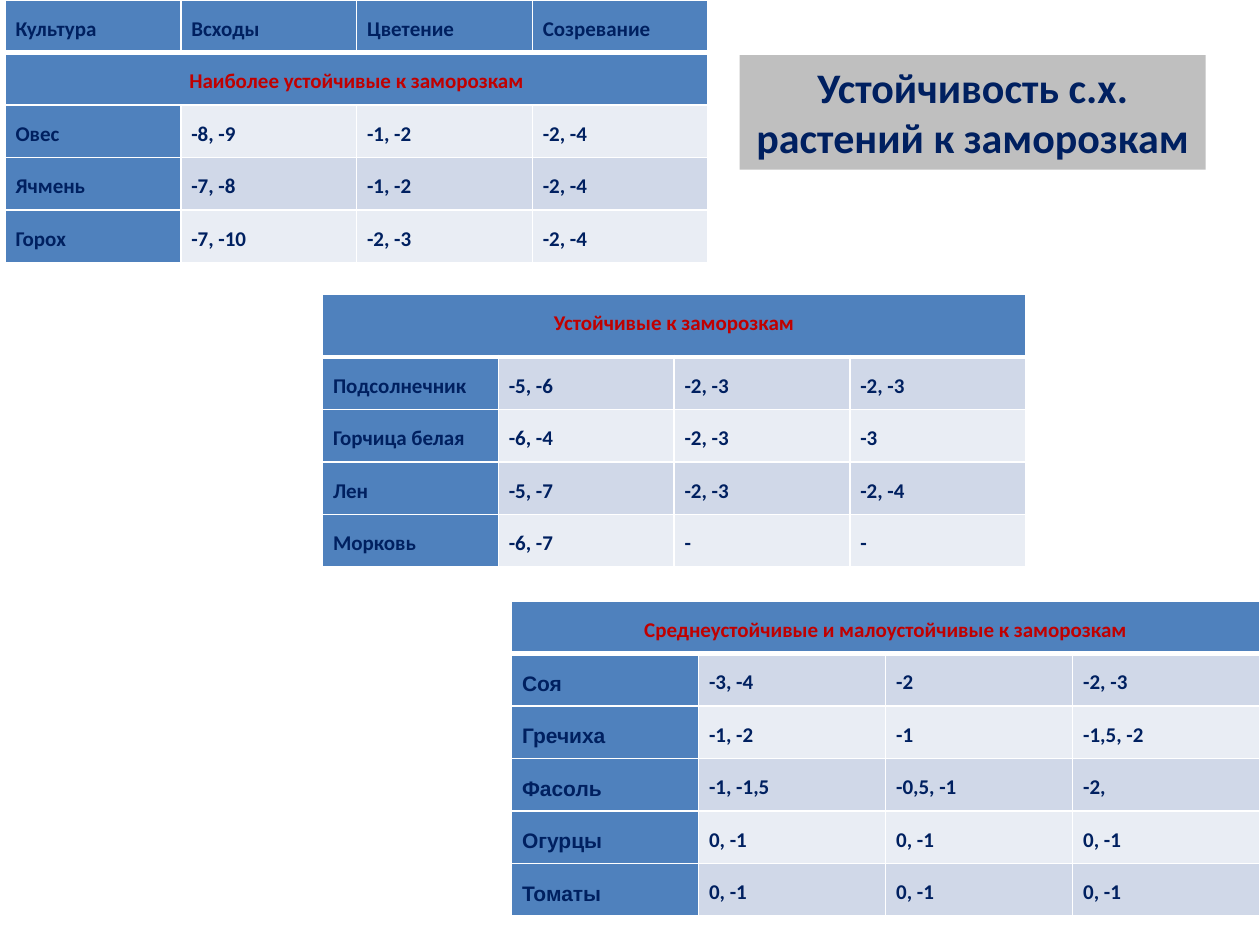
from lxml import etree
from pptx import Presentation
from pptx import util as u
from pptx.dml.color import RGBColor
from pptx.enum import text
from pptx.oxml import ns

WIDE, HIGH = u.Inches(10), u.Inches(7.5)
ROW = HIGH // 18
PAD = ROW // 5
MID = text.PP_ALIGN.CENTER
COLORS = {"navy": "002060", "red": "C00000", "blue": "4F81BD", "white": "FFFFFF",
          "pale": "E9EDF4", "band": "D0D8E8", "gray": "BFBFBF"}
SPACING = {"line_spacing": u.Pt(18), "space_after": u.Pt(18)}
MARGINS = {"margin_" + side: PAD for side in ("left", "top", "right", "bottom")}

HEAD = ["Культура", "Всходы", "Цветение", "Созревание"]
HARDY = [
    HEAD,
    ["Наиболее устойчивые к заморозкам"],
    ["Овес", "-8, -9", "-1, -2", "-2, -4"],
    ["Ячмень", "-7, -8", "-1, -2", "-2, -4"],
    ["Горох", "-7, -10", "-2, -3", "-2, -4"],
]
FIRM = [
    ["Устойчивые к заморозкам"],
    ["Подсолнечник", "-5, -6", "-2, -3", "-2, -3"],
    ["Горчица белая", "-6, -4", "-2, -3", "-3"],
    ["Лен", "-5, -7", "-2, -3", "-2, -4"],
    ["Морковь", "-6, -7", "-", "-"],
]
WEAK = [
    ["Среднеустойчивые и малоустойчивые к заморозкам"],
    ["Соя", "-3, -4", "-2", "-2, -3"],
    ["Гречиха", "-1, -2", "-1", "-1,5, -2"],
    ["Фасоль", "-1, -1,5", "-0,5, -1", "-2,"],
    ["Огурцы", "0, -1", "0, -1", "0, -1"],
    ["Томаты", "0, -1", "0, -1", "0, -1"],
]


def box(left, top, width, rows):
    """Left and width are shares of the slide's width; top and rows count grid rows."""
    return int(left * WIDE), int(top * ROW), int(width * WIDE), int(rows * ROW)


def apply(item, values):
    for name, value in values.items():
        setattr(item, name, value)


def paint(item, color):
    item.fill.solid()
    item.fill.fore_color.rgb = RGBColor.from_string(COLORS[color])


def write(frame, words, size, color="navy", face="Calibri", **form):
    """Put one bold run in the frame; form holds paragraph settings."""
    para = frame.paragraphs[0]
    apply(para, form)
    run = para.add_run()
    run.text = words
    apply(run.font, {"size": u.Pt(size), "name": face, "bold": True})
    run.font.color.rgb = RGBColor.from_string(COLORS[color])


def fill_cell(cell, words, shade, **look):
    apply(cell, MARGINS)
    paint(cell, shade)
    write(cell.text_frame, words, 12, **SPACING, **look)


def underline(cell):
    """Draw the thick white rule below a cell of the top row."""
    props = cell._tc.get_or_add_tcPr()
    line = etree.Element(ns.qn("a:lnB"), w=str(u.Pt(3)))
    fill = etree.SubElement(line, ns.qn("a:solidFill"))
    etree.SubElement(fill, ns.qn("a:srgbClr"), val=COLORS["white"])
    props.insert(0, line)


def crops(slide, area, data, first=1, face="Calibri"):
    """A table of crops; first is the top row's height and face the crop names' font."""
    table = slide.shapes.add_table(len(data), len(HEAD), *area).table
    table.first_col = True
    for col in table.columns:
        col.width = area[2] // len(HEAD)
    for r, line in enumerate(data):
        cells = list(table.rows[r].cells)
        table.rows[r].height = int(ROW * (first if r == 0 else 1))
        if len(line) == 1:
            cells[0].merge(cells[-1])
            fill_cell(cells[0], line[0], "blue", color="red", alignment=MID)
        else:
            shade = "blue" if r == 0 else ("pale", "band")[r % 2]
            fill_cell(cells[0], line[0], "blue", face=face)
            for cell, words in zip(cells[1:], line[1:]):
                fill_cell(cell, words, shade)
    for cell in table.rows[0].cells:
        underline(cell)


def title(slide, area, words):
    shape = slide.shapes.add_textbox(*area)
    paint(shape, "gray")
    shape.text_frame.word_wrap = True
    write(shape.text_frame, words, 24, alignment=MID)


def main():
    deck = Presentation()
    deck.slide_width, deck.slide_height = WIDE, HIGH
    slide = deck.slides.add_slide(deck.slide_layouts[6])
    crops(slide, box(0.004, 0, 0.558, 5), HARDY)
    crops(slide, box(0.256, 5.6, 0.558, 5.2), FIRM, first=1.2)
    crops(slide, box(0.406, 11.45, 0.594, 6), WEAK, face="Arial")
    title(slide, box(0.587, 1.05, 0.37, 2.18),
          "Устойчивость с.х. растений к заморозкам")
    deck.save("out.pptx")


if __name__ == "__main__":
    main()
